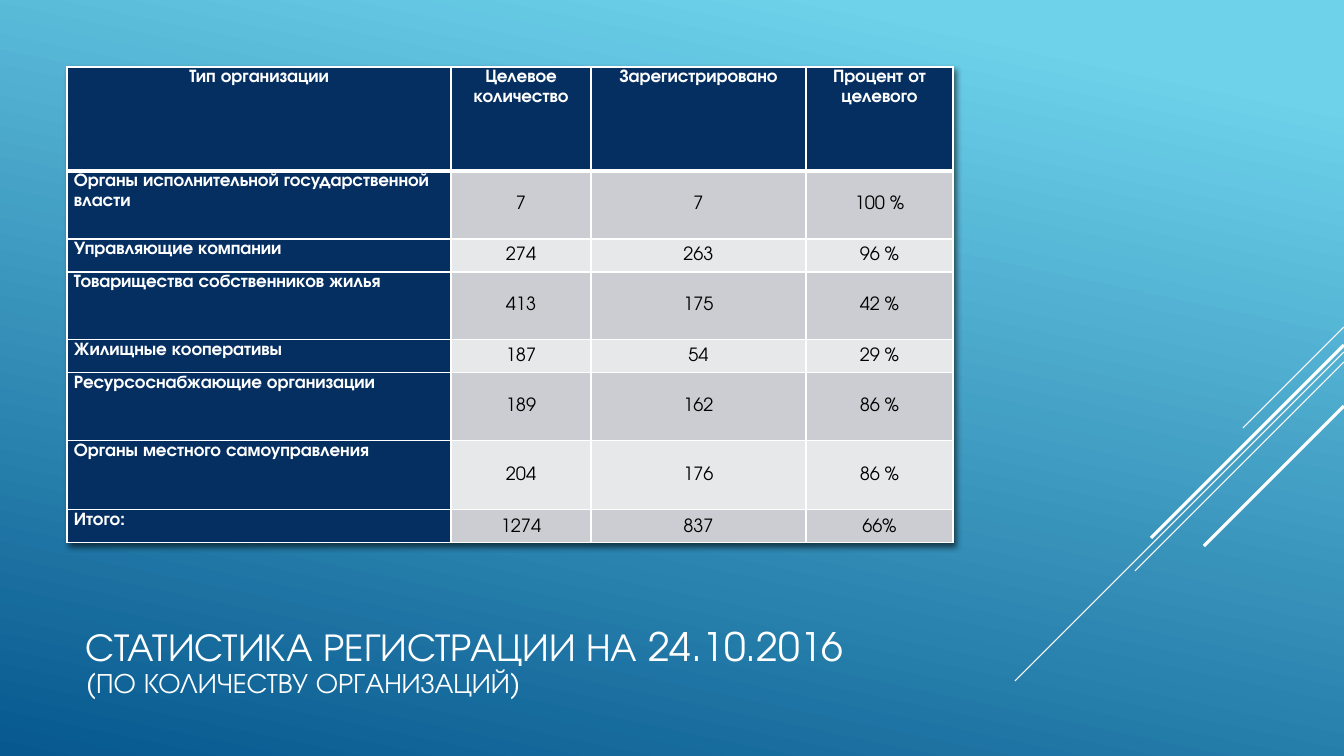
import pptx
import pptx.dml.color
import pptx.enum.shapes
import pptx.enum.text
import pptx.oxml
import pptx.oxml.ns
import pptx.util
from dataclasses import dataclass

ALIGN = pptx.enum.text.PP_ALIGN
ANCHOR = pptx.enum.text.MSO_ANCHOR
NS = pptx.oxml.ns.nsdecls("a")


@dataclass(frozen=True)
class Theme:
    font: str = "TeX Gyre Adventor"
    white: str = "FFFFFF"
    black: str = "000000"
    navy: str = "052F61"
    bands: tuple = ("CCCDD2", "E7E8EA")
    sky: tuple = ((0.1, "6ED2EB"), (1, "06588E"))
    sky_angle: int = 102
    title: int = 28
    subtitle: int = 20
    cell: int = 13


def px(n):
    return pptx.util.Emu(round(n * 914400 / 100.8))


def rgb(value):
    return pptx.dml.color.RGBColor.from_string(value)


def apply(target, **values):
    for name, value in values.items():
        setattr(target, name, value)


class Deck:
    def __init__(self, theme, width, height):
        self.theme = theme
        self.prs = pptx.Presentation()
        apply(self.prs, slide_width=px(width), slide_height=px(height))
        self.s = self.prs.slides.add_slide(self.prs.slide_layouts[6])

    def background(self):
        fill = self.s.background.fill
        fill.gradient()
        fill.gradient_angle = 360 - self.theme.sky_angle
        for stop, (position, color) in zip(fill.gradient_stops, self.theme.sky):
            stop.position = position
            stop.color.rgb = rgb(color)

    def run(self, p, text, size, color, bold=False):
        r = p.add_run()
        r.text = text
        apply(r.font, name=self.theme.font, size=pptx.util.Pt(size), bold=bold)
        r.font.color.rgb = rgb(color)

    def line(self, x1, y1, x2, y2, weight):
        c = self.s.shapes.add_connector(
            pptx.enum.shapes.MSO_CONNECTOR.STRAIGHT, px(x1), px(y1), px(x2), px(y2))
        c.line.width = pptx.util.Pt(weight)
        c.line.color.rgb = rgb(self.theme.white)
        c._element.spPr.append(pptx.oxml.parse_xml(f"<a:effectLst {NS}/>"))

    def title(self, x, y, w, h, text, subtitle):
        tf = self.s.shapes.add_textbox(px(x), px(y), px(w), px(h)).text_frame
        apply(tf, word_wrap=True, vertical_anchor=ANCHOR.MIDDLE)
        p = tf.paragraphs[0]
        p.line_spacing = 0.9
        self.run(p, text, self.theme.title, self.theme.white)
        p.add_line_break()
        self.run(p, subtitle, self.theme.subtitle, self.theme.white)

    def cell(self, cell, text, fill, color, bold, anchor, align, spacing, borders):
        apply(cell, margin_left=px(7), margin_right=px(7), margin_top=0,
              margin_bottom=0, vertical_anchor=anchor)
        p = cell.text_frame.paragraphs[0]
        apply(p, alignment=align, line_spacing=spacing)
        self.run(p, text, self.theme.cell, color, bold)
        tcPr = cell._tc.get_or_add_tcPr()
        for side, weight in borders.items():
            tcPr.append(pptx.oxml.parse_xml(
                f'<a:ln{side} {NS} w="{pptx.util.Pt(weight)}"><a:solidFill>'
                f'<a:srgbClr val="{self.theme.white}"/></a:solidFill></a:ln{side}>'))
        cell.fill.solid()
        cell.fill.fore_color.rgb = rgb(fill)

    def table(self, x, y, widths, heights, rows):
        t = self.theme
        table = self.s.shapes.add_table(
            len(rows), len(widths), px(x), px(y), px(sum(widths)), px(sum(heights))).table
        for column, width in zip(table.columns, widths):
            column.width = px(width)
        for row, height in zip(table.rows, heights):
            row.height = px(height)
        last = len(rows) - 1
        for i, row in enumerate(rows):
            for j, text in enumerate(row):
                heading = i == 0 or j == 0
                align = ALIGN.CENTER
                if j == 0 and i > 0:
                    align = ALIGN.JUSTIFY if i == last else ALIGN.LEFT
                self.cell(
                    table.cell(i, j), text,
                    fill=t.navy if heading else t.bands[(i - 1) % 2],
                    color=t.white if heading else t.black,
                    bold=heading,
                    anchor=ANCHOR.TOP if heading else ANCHOR.MIDDLE,
                    align=align,
                    spacing=1.15 if heading or i == last else 1.0,
                    borders={"L": 1, "R": 1, "T": 3 if i == 1 else 1,
                             "B": 3 if i == 0 else 1})
        # Soft shadow below and to the right
        table._tbl.tblPr.insert(0, pptx.oxml.parse_xml(
            f'<a:effectLst {NS}><a:outerShdw blurRad="50800" dist="38100" dir="2700000" '
            'algn="tl" rotWithShape="0"><a:srgbClr val="000000"><a:alpha val="60000"/>'
            '</a:srgbClr></a:outerShdw></a:effectLst>'))


WIDTH, HEIGHT = 1344, 756

# Diagonal rays: start height on the right edge, run, weight
RAYS = [(327, 101, 0.75), (352, 329, 0.75), (362, 209, 0.75),
        (345, 193, 2.25), (406, 140, 2.25)]

COLUMNS = [384, 140, 215, 147]
HEIGHTS = [104, 68, 33, 68, 33, 68, 69, 33]
REGISTRATION = [
    ("Тип организации", "Целевое количество", "Зарегистрировано", "Процент от целевого"),
    ("Органы исполнительной государственной власти", "7", "7", "100 %"),
    ("Управляющие компании", "274", "263", "96 %"),
    ("Товарищества собственников жилья", "413", "175", "42 %"),
    ("Жилищные кооперативы", "187", "54", "29 %"),
    ("Ресурсоснабжающие организации", "189", "162", "86 %"),
    ("Органы местного самоуправления", "204", "176", "86 %"),
    ("Итого:", "1274", "837", "66%"),
]


def main():
    deck = Deck(Theme(), WIDTH, HEIGHT)
    # Backdrop
    deck.background()
    for y, reach, weight in RAYS:
        deck.line(WIDTH, y, WIDTH - reach, y + reach, weight)
    # Title
    deck.title(76, 602, 940, 123, "СТАТИСТИКА РЕГИСТРАЦИИ НА 24.10.2016",
               "(ПО КОЛИЧЕСТВУ ОРГАНИЗАЦИЙ)")
    # Registration table
    deck.table(67, 67, COLUMNS, HEIGHTS, REGISTRATION)
    deck.prs.save("out.pptx")


if __name__ == "__main__":
    main()
